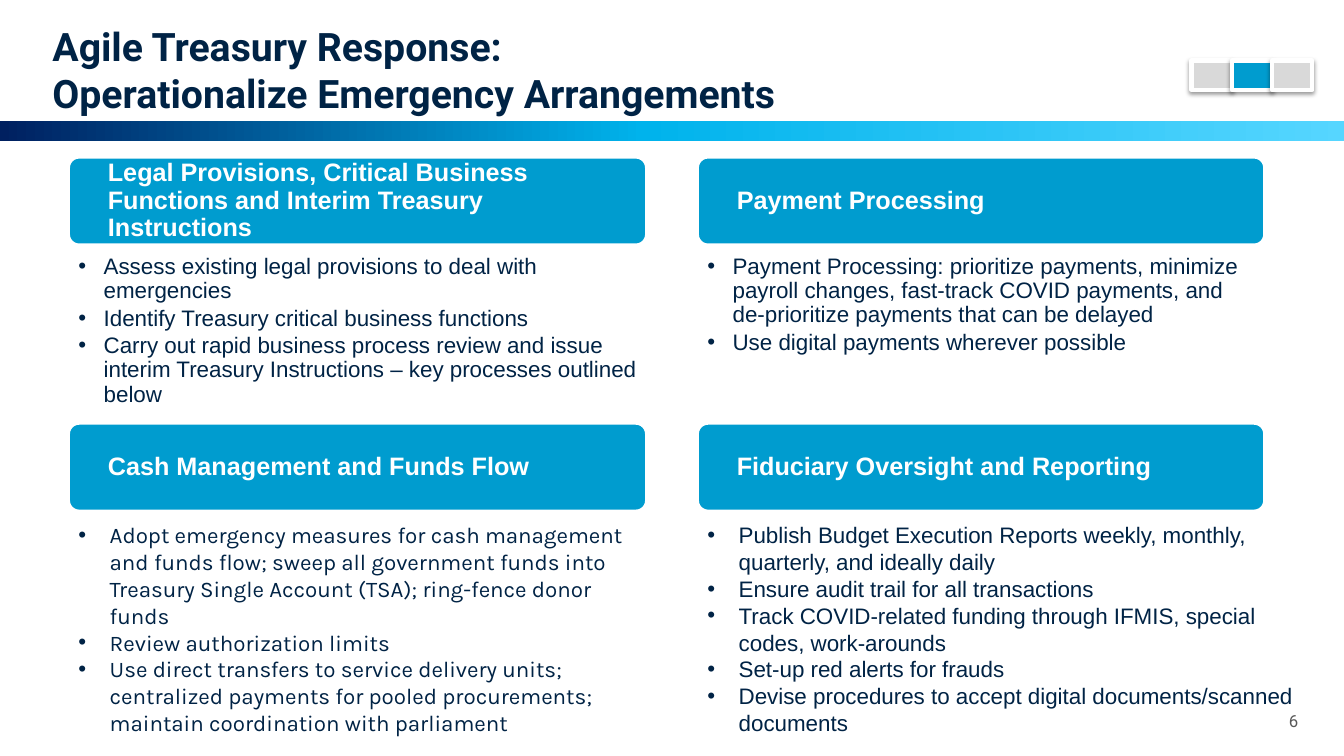
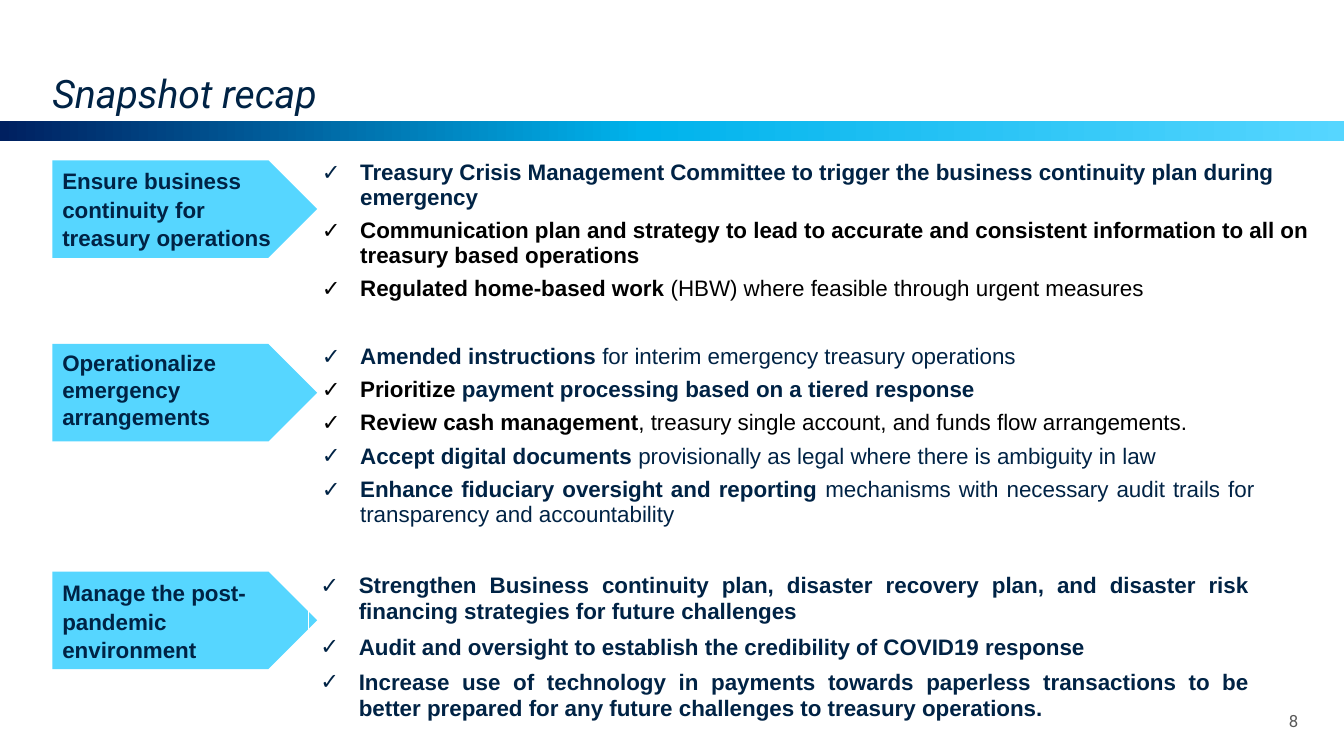
from copy import deepcopy

from lxml import etree
from pptx import Presentation
from pptx import util as u
from pptx.dml.color import RGBColor
from pptx.enum import shapes, text
from pptx.oxml.ns import qn

NAVY = RGBColor(0x00, 0x23, 0x45)
DEEP = RGBColor(0x00, 0x20, 0x60)
CYAN = RGBColor(0x00, 0xB3, 0xEC)
SKY = RGBColor(0x56, 0xD6, 0xFF)
BLUE = RGBColor(0x00, 0x9C, 0xCF)
PALE = RGBColor(0xD9, 0xD9, 0xD9)
GREY = RGBColor(0x59, 0x59, 0x59)
WHITE = RGBColor(0xFF, 0xFF, 0xFF)
BLACK = RGBColor(0, 0, 0)

LEFT, RIGHT, JUSTIFY = text.PP_ALIGN.LEFT, text.PP_ALIGN.RIGHT, text.PP_ALIGN.JUSTIFY
TOP, MIDDLE, BOTTOM = text.MSO_ANCHOR.TOP, text.MSO_ANCHOR.MIDDLE, text.MSO_ANCHOR.BOTTOM
KIND = shapes.MSO_SHAPE

deck = Presentation()
deck.slide_width, deck.slide_height = u.Inches(13.33), u.Inches(7.5)
# The grid has 100 columns and 100 rows
COL, ROW = deck.slide_width / 100, deck.slide_height / 100


def place(left, top, width, height):
    """Turn grid columns and rows into a position and a size."""
    return round(left * COL), round(top * ROW), round(width * COL), round(height * ROW)


def add_para(frame, runs, size=16, font="Arial", italic=False, align=LEFT,
             mark=None, indent=0, line=1.0, before=0, after=0):
    """Add a paragraph made of (words, bold, colour) runs."""
    first = frame.paragraphs[0]
    para = frame.add_paragraph() if first.runs else first
    para.alignment, para.line_spacing = align, line
    para.space_before, para.space_after = u.Pt(before), u.Pt(after)
    for words, bold, color in runs:
        span = para.add_run()
        span.text = words
        span.font.size, span.font.name = u.Pt(size), font
        span.font.bold, span.font.italic = bold, italic
        span.font.color.rgb = color
    if mark:
        props = para._p.get_or_add_pPr()
        props.set("marL", str(u.Inches(indent)))
        props.set("indent", str(-u.Inches(indent)))
        etree.SubElement(props, qn("a:buFont"), typeface="Arial")
        etree.SubElement(props, qn("a:buChar"), char=mark)


# Shared parts: gradient band, title and page number
headings = [
    (["Agile Treasury Response:", "Operationalize Emergency Arrangements"], True, "6"),
    (["Snapshot recap"], False, "8"),
]
pages = []
for lines, bold, number in headings:
    page = deck.slides.add_slide(deck.slide_layouts[6])
    pages.append(page)

    band = page.shapes.add_shape(KIND.RECTANGLE, *place(0, 16, 100, 2.6))
    band.shadow.inherit = False
    band.line.fill.background()
    band.fill.gradient()
    band.fill.gradient_angle = 0
    stop_list = band._element.spPr.find(".//" + qn("a:gsLst"))
    stop_list.insert(1, deepcopy(stop_list[0]))
    for stop, color, position in zip(band.fill.gradient_stops,
                                     (DEEP, CYAN, SKY), (0, 0.48, 1)):
        stop.color.rgb, stop.position = color, position

    title = page.shapes.add_textbox(*place(3.9, 4.3, 92.6, 11.1)).text_frame
    footer = page.shapes.add_textbox(*place(93.2, 92.7, 3.4, 5.3)).text_frame
    for frame, anchor in ((title, BOTTOM), (footer, MIDDLE)):
        frame.word_wrap, frame.vertical_anchor = True, anchor
        frame.margin_left = frame.margin_right = 0
        frame.margin_top = frame.margin_bottom = 0
    for words in lines:
        add_para(title, [(words, bold, NAVY)], 28, "Roboto", italic=not bold)
    add_para(footer, [(number, False, GREY)], 12, "Roboto", align=RIGHT)

arrangements, recap = pages

# Progress marker: three boxes with the middle one lit
marker = arrangements.shapes.add_group_shape()
for step, color in enumerate((PALE, BLUE, PALE)):
    box = marker.shapes.add_shape(KIND.RECTANGLE, *place(88.65 + 3 * step, 8, 3, 3.9))
    box.fill.solid()
    box.fill.fore_color.rgb = color
    box.line.color.rgb, box.line.width = WHITE, u.Pt(3)
    box.shadow.inherit = False
    effects = box._element.spPr.find(qn("a:effectLst"))
    shade = etree.SubElement(effects, qn("a:outerShdw"), blurRad=str(u.Pt(3.1)),
                             dist=str(u.Pt(1.6)), dir="5400000", rotWithShape="0")
    tint = etree.SubElement(shade, qn("a:srgbClr"), val=str(BLACK))
    etree.SubElement(tint, qn("a:alpha"), val="38000")

# Four cards: column, row, heading, body width, body font, bullets
LEFT_CARD, RIGHT_CARD = (5.1, 43), (51.9, 42.2)
UPPER, LOWER = 20.8, 56
cards = [
    (LEFT_CARD, UPPER,
     "Legal Provisions, Critical Business Functions and Interim Treasury Instructions",
     43, "Arial",
     ["Assess existing legal provisions to deal with emergencies",
      "Identify Treasury critical business functions",
      "Carry out rapid business process review and issue interim Treasury "
      "Instructions – key processes outlined below"]),
    (RIGHT_CARD, UPPER, "Payment Processing", 42.2, "Arial",
     ["Payment Processing: prioritize payments, minimize payroll changes, fast-track "
      "COVID payments, and de-prioritize payments that can be delayed",
      "Use digital payments wherever possible"]),
    (LEFT_CARD, LOWER, "Cash Management and Funds Flow", 43, "Karla",
     ["Adopt emergency measures for cash management and funds flow; sweep all "
      "government funds into Treasury Single Account (TSA); ring-fence donor funds",
      "Review authorization limits",
      "Use direct transfers to service delivery units; centralized payments for "
      "pooled procurements; maintain coordination with parliament"]),
    (RIGHT_CARD, LOWER, "Fiduciary Oversight and Reporting", 45.7, "Arial",
     ["Publish Budget Execution Reports weekly, monthly, quarterly, and ideally daily",
      "Ensure audit trail for all transactions",
      "Track COVID-related funding through IFMIS, special codes, work-arounds",
      "Set-up red alerts for frauds",
      "Devise procedures to accept digital documents/scanned documents"]),
]
for (left, width), top, heading, body_width, font, bullets in cards:
    card = arrangements.shapes.add_shape(KIND.ROUNDED_RECTANGLE,
                                         *place(left, top, width, 11.6))
    card.adjustments[0] = 0.12
    card.shadow.inherit = False
    card.fill.solid()
    card.fill.fore_color.rgb = BLUE
    card.line.color.rgb, card.line.width = WHITE, u.Pt(2)
    frame = card.text_frame
    frame.word_wrap, frame.vertical_anchor = True, MIDDLE
    frame.margin_left = frame.margin_right = u.Inches(0.36)
    frame.margin_top = frame.margin_bottom = u.Inches(0.04)
    add_para(frame, [(heading, True, WHITE)], 18, line=0.9)

    body = arrangements.shapes.add_textbox(
        *place(left, top + 12.3, body_width, 21.9 if top == UPPER else 30.1)).text_frame
    body.word_wrap = True
    layout = (dict(indent=0.25, line=0.9, after=2.4) if top == UPPER
              else dict(indent=0.31))
    for words in bullets:
        add_para(body, [(words, False, NAVY)], font=font, mark="•", **layout)

# Three recap sections: an arrow label and a one-cell table of checks
sections = [
    dict(label="Ensure business continuity for treasury operations", top=21.2,
         anchor=TOP, label_line=1.07, table=(23.05, 75.5, 20), align=LEFT, line=1.0,
         parts=("table", "arrow"), checks=[
             [("Treasury Crisis Management Committee to trigger the business "
               "continuity plan during emergency", True, NAVY)],
             [("Communication plan and strategy to lead to accurate and consistent "
               "information to all on treasury based operations", True, BLACK)],
             [("Regulated home-based work", True, BLACK),
              (" (HBW) where feasible through urgent measures", False, BLACK)]]),
    dict(label="Operationalize emergency arrangements", top=45.5,
         anchor=TOP, label_line=1.0, table=(23.05, 71.2, 25.7), align=JUSTIFY, line=1.0,
         parts=("table", "arrow"), checks=[
             [("Amended instructions", True, NAVY),
              (" for interim emergency treasury operations", False, NAVY)],
             [("Prioritize", True, BLACK),
              (" payment processing based on a tiered response", True, NAVY)],
             [("Review cash management", True, BLACK),
              (", treasury single account, and funds flow arrangements.", False, BLACK)],
             [("Accept digital documents", True, NAVY),
              (" provisionally as legal where there is ambiguity in law", False, NAVY)],
             [("Enhance fiduciary oversight and reporting", True, NAVY),
              (" mechanisms with necessary audit trails for transparency and "
               "accountability", False, NAVY)]]),
    dict(label="Manage the post-pandemic environment", top=75.6,
         anchor=MIDDLE, label_line=1.07, table=(22.95, 70.9, 20.9), align=JUSTIFY,
         line=1.07, parts=("arrow", "table"), checks=[
             [("Strengthen Business continuity plan, disaster recovery plan, and "
               "disaster risk financing strategies for future challenges", True, NAVY)],
             [("Audit and oversight to establish the credibility of COVID19 response",
               True, NAVY)],
             [("Increase use of technology in payments towards paperless transactions "
               "to be better prepared for any future challenges to treasury operations.",
               True, NAVY)]]),
]
for section in sections:
    for part in section["parts"]:
        if part == "arrow":
            arrow = recap.shapes.add_shape(KIND.PENTAGON,
                                           *place(3.9, section["top"], 19.7, 12.9))
            arrow.shadow.inherit = False
            arrow.fill.solid()
            arrow.fill.fore_color.rgb = SKY
            arrow.line.fill.background()
            arrow.text_frame.word_wrap = True
            arrow.text_frame.vertical_anchor = section["anchor"]
            add_para(arrow.text_frame, [(section["label"], True, NAVY)],
                     line=section["label_line"])
            continue

        left, width, height = section["table"]
        table = recap.shapes.add_table(
            1, 1, *place(left, section["top"], width, height)).table
        table.first_row = table.horz_banding = False
        cell = table.cell(0, 0)
        cell.margin_left = cell.margin_right = u.Inches(0.12)
        cell.margin_top = cell.margin_bottom = 0
        for runs in section["checks"]:
            add_para(cell.text_frame, runs, align=section["align"], mark="✓",
                     indent=0.38, line=section["line"], before=3, after=3)
        # White cell borders come before the fill
        props = cell._tc.get_or_add_tcPr()
        for edge in ("a:lnL", "a:lnR", "a:lnT", "a:lnB"):
            border = etree.SubElement(props, qn(edge), w=str(u.Pt(1)))
            paint = etree.SubElement(border, qn("a:solidFill"))
            etree.SubElement(paint, qn("a:srgbClr"), val=str(WHITE))
        cell.fill.background()

deck.save("out.pptx")
